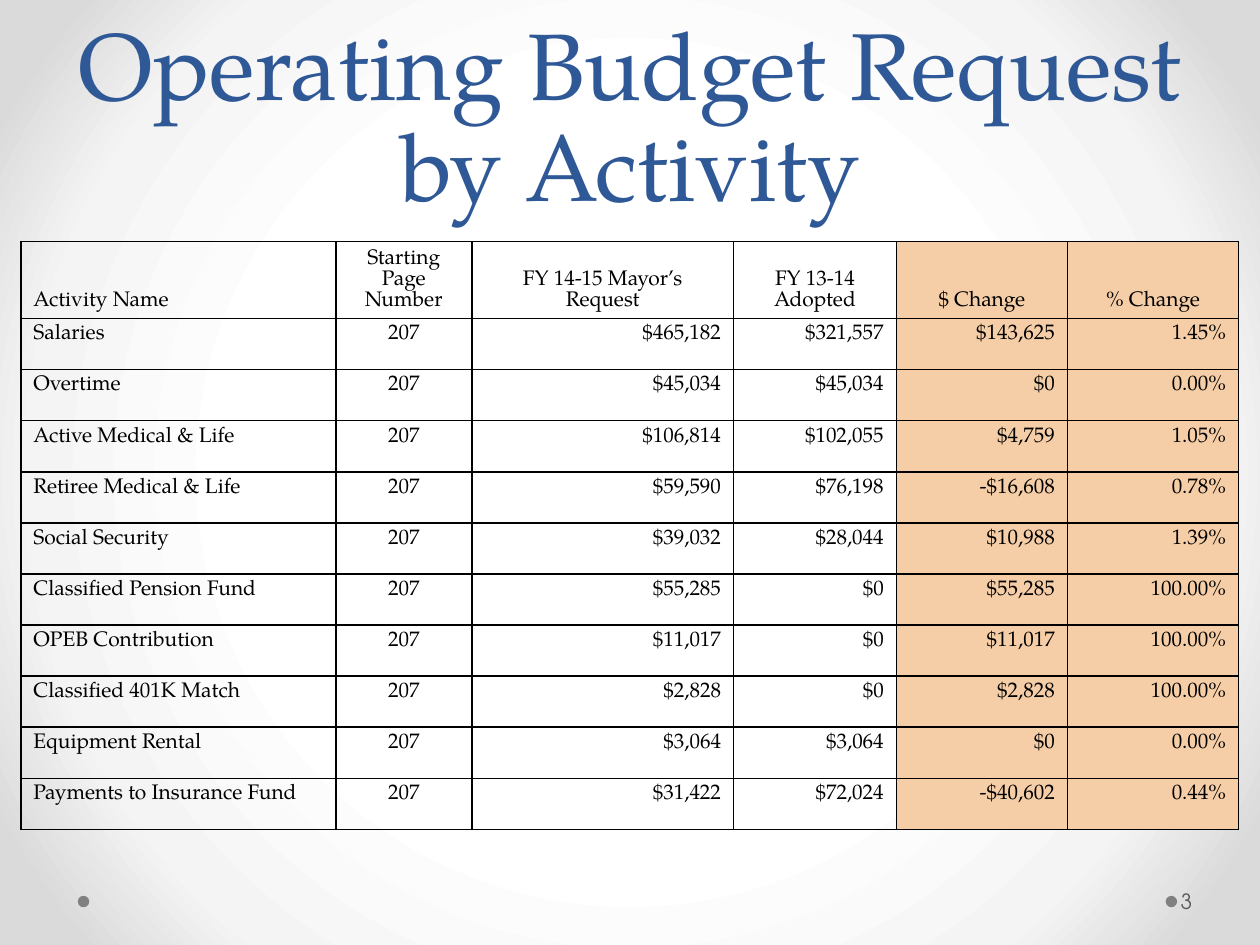
from pptx import Presentation
from pptx.dml.color import RGBColor
from pptx.enum.shapes import MSO_SHAPE as Shape
from pptx.enum.text import MSO_ANCHOR as Anchor, PP_ALIGN as Align
from pptx.oxml import parse_xml
from pptx.oxml.ns import nsdecls, qn
from pptx.util import Cm, Pt

COLORS = {"title": "2F5897", "ink": "000000", "change": "F5CEA7",
          "dot": "808080", "number": "595959"}
BACKDROP = [(50, "FFFFFF"), (76, "F4F4F4"), (92, "DADADA")]
SERIF, SANS = "TeX Gyre Pagella", "TeX Gyre Adventor"

PAGE = "207"
HEADINGS = ["Activity Name", "Starting Page Number", "FY 14-15 Mayor’s Request",
            "FY 13-14 Adopted", "$ Change", "% Change"]
ACTIVITIES = [
    ("Salaries", PAGE, "$465,182", "$321,557", "$143,625", "1.45%"),
    ("Overtime", PAGE, "$45,034", "$45,034", "$0", "0.00%"),
    ("Active Medical & Life", PAGE, "$106,814", "$102,055", "$4,759", "1.05%"),
    ("Retiree Medical & Life", PAGE, "$59,590", "$76,198", "-$16,608", "0.78%"),
    ("Social Security", PAGE, "$39,032", "$28,044", "$10,988", "1.39%"),
    ("Classified Pension Fund", PAGE, "$55,285", "$0", "$55,285", "100.00%"),
    ("OPEB Contribution", PAGE, "$11,017", "$0", "$11,017", "100.00%"),
    ("Classified 401K Match", PAGE, "$2,828", "$0", "$2,828", "100.00%"),
    ("Equipment Rental", PAGE, "$3,064", "$3,064", "$0", "0.00%"),
    ("Payments to Insurance Fund", PAGE, "$31,422", "$72,024", "-$40,602", "0.44%"),
]
COLUMN_WIDTHS = [6.35, 2.74, 5.28, 3.28, 3.45, 3.45]
HEADING_HEIGHT, ACTIVITY_HEIGHT = 1.55, 1.03
FIRST_CHANGE_COLUMN = 4


def rgb(name):
    return RGBColor.from_string(COLORS[name])


class BudgetSlide:
    def __init__(self, slide):
        self.slide = slide

    def backdrop(self, stops):
        self.slide.background.fill.solid()
        solid = next(self.slide.element.iter(qn("a:solidFill")))
        marks = "".join(f'<a:gs pos="{pos * 1000}"><a:srgbClr val="{color}"/></a:gs>'
                        for pos, color in stops)
        solid.getparent().replace(solid, parse_xml(
            f'<a:gradFill {nsdecls("a")} rotWithShape="1"><a:gsLst>{marks}</a:gsLst>'
            '<a:path path="circle"><a:fillToRect l="50000" t="50000" r="50000" b="50000"/>'
            '</a:path></a:gradFill>'))

    def set_words(self, frame, words, size, color, font=SERIF, align=Align.LEFT, spacing=None):
        frame.text = words
        paragraph = frame.paragraphs[0]
        paragraph.alignment = align
        paragraph.line_spacing = spacing
        for run in paragraph.runs:
            run.font.size = Pt(size)
            run.font.name = font
            run.font.color.rgb = rgb(color)

    def text(self, box, words, anchor, margins, **style):
        frame = self.slide.shapes.add_textbox(*map(Cm, box)).text_frame
        frame.word_wrap = True
        frame.vertical_anchor = anchor
        (frame.margin_left, frame.margin_top,
         frame.margin_right, frame.margin_bottom) = map(Cm, margins)
        self.set_words(frame, words, **style)

    def dot(self, left, top, diameter):
        dot = self.slide.shapes.add_shape(
            Shape.OVAL, Cm(left), Cm(top), Cm(diameter), Cm(diameter))
        dot.shadow.inherit = False
        dot.fill.solid()
        dot.fill.fore_color.rgb = rgb("dot")
        dot.line.fill.background()

    def borders(self, cell):
        properties = cell._tc.get_or_add_tcPr()
        for position, side in enumerate(("lnL", "lnR", "lnT", "lnB")):
            properties.insert(position, parse_xml(
                f'<a:{side} {nsdecls("a")} w="{Pt(1)}"><a:solidFill>'
                f'<a:srgbClr val="{COLORS["ink"]}"/></a:solidFill></a:{side}>'))

    def table(self, left, top, rows, widths, heights):
        frame = self.slide.shapes.add_table(
            len(rows), len(widths), Cm(left), Cm(top), Cm(sum(widths)), Cm(sum(heights)))
        table = frame.table
        table.first_row = table.horz_banding = False
        for column, width in zip(table.columns, widths):
            column.width = Cm(width)
        for row, height in zip(table.rows, heights):
            row.height = Cm(height)
        for r, row in enumerate(rows):
            for c, words in enumerate(row):
                cell = table.cell(r, c)
                if c == 0:
                    align = Align.LEFT
                else:
                    align = Align.CENTER if r == 0 or c == 1 else Align.RIGHT
                self.set_words(cell.text_frame, words, 12, "ink", align=align, spacing=Pt(12))
                cell.vertical_anchor = Anchor.BOTTOM if r == 0 else Anchor.TOP
                if c >= FIRST_CHANGE_COLUMN:
                    cell.fill.solid()
                    cell.fill.fore_color.rgb = rgb("change")
                else:
                    cell.fill.background()
                self.borders(cell)


def main():
    deck = Presentation()
    deck.slide_width, deck.slide_height = Cm(25.4), Cm(19.05)
    budget = BudgetSlide(deck.slides.add_slide(deck.slide_layouts[6]))

    # Background and footer dots
    budget.backdrop(BACKDROP)
    for left in (23.5, 1.57):
        budget.dot(left, 18.06, 0.23)

    # Title
    budget.text((1.27, 0, 22.86, 4.45), "Operating Budget Request by Activity",
                Anchor.BOTTOM, (0.25, 0.13, 0.25, 0), size=54, color="title",
                align=Align.CENTER, spacing=Pt(58))

    # Budget by activity
    heights = [HEADING_HEIGHT] + [ACTIVITY_HEIGHT] * len(ACTIVITIES)
    budget.table(0.42, 4.87, [HEADINGS, *ACTIVITIES], COLUMN_WIDTHS, heights)

    # Slide number
    budget.text((23.72, 17.65, 1.55, 1.02), "3", Anchor.MIDDLE,
                (0.08, 0.13, 0.13, 0.13), size=12, color="number", font=SANS)

    deck.save("out.pptx")


if __name__ == "__main__":
    main()
